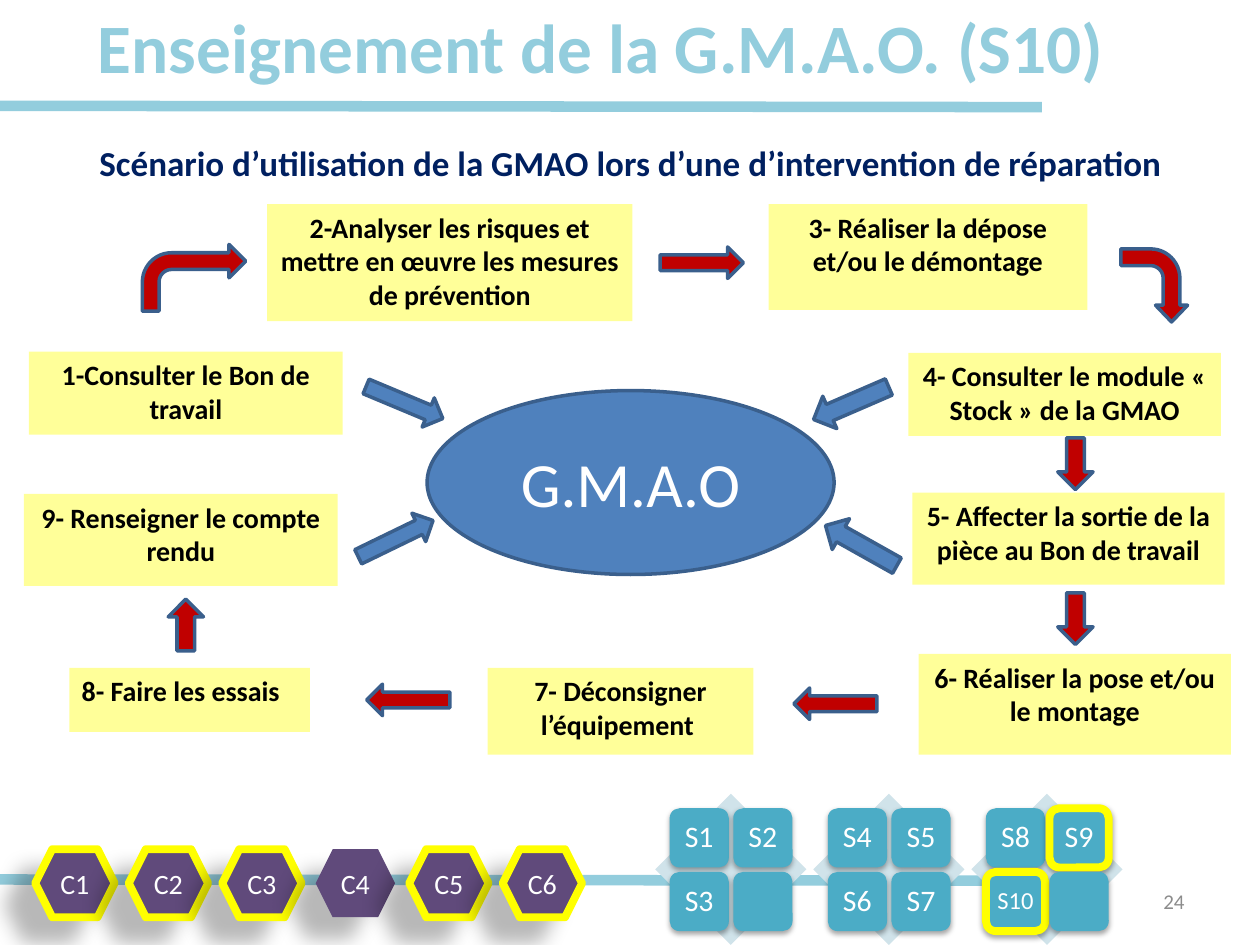
from lxml.etree import SubElement
from pptx import Presentation
from pptx.dml.color import RGBColor
from pptx.enum.shapes import MSO_CONNECTOR, MSO_SHAPE as SHAPE
from pptx.enum.text import MSO_ANCHOR as ANCHOR, PP_ALIGN as ALIGN
from pptx.oxml.ns import qn
from pptx.util import Inches, Pt

COLS, ROWS = 100, 75
WIDTH, HEIGHT = Inches(10), Inches(7.5)
FONT = "Calibri"
WHITE, BLACK, YELLOW = "FFFFFF", "000000", "FFFF00"
SKY, NAVY, TEAL, PALE = "93CDDD", "002060", "4BACC6", "D0E3EA"
PURPLE, CREAM, RED = "604A7B", "FFFF99", "C00000"
BLUE, EDGE, GREY = "4F81BD", "3A5F8C", "8C8C8C"
TILE_SHADOW = (35, 3.1, 1.8, 90)
HEX_SHADOW = (28, 11.8, 19.7, 141)

STEPS = [
    ("1-Consulter le Bon de travail", (2.3, 27.9, 24.9, 6.6)),
    ("2-Analyser les risques et mettre en œuvre les mesures de prévention",
     (21.2, 16.2, 29, 9.3)),
    ("3- Réaliser la dépose et/ou le démontage", (61, 16.2, 25.3, 8.4)),
    ("4- Consulter le module « Stock » de la GMAO", (72.1, 28, 24.8, 6.6)),
    ("5- Affecter la sortie de la pièce au Bon de travail",
     (72.4, 39.1, 24.8, 7.3)),
    ("6- Réaliser la pose et/ou le montage", (72.9, 51.9, 24.8, 8)),
    ("7- Déconsigner l’équipement ", (38.7, 53, 21.1, 6.9)),
    ("8- Faire les essais", (5.5, 53, 19.1, 5.1)),
    ("9- Renseigner le compte rendu", (1.9, 39.2, 24.9, 7.3)),
]
ARROWS = [
    ((28.8, 30.7, 6.6, 2.5), 22.7, BLUE),
    ((64.3, 30.6, 6.5, 2.8), 156.6, BLUE),
    ((65.1, 41.9, 6.5, 2.8), 209.3, BLUE),
    ((28.1, 41.5, 6.6, 2.5), 334.1, BLUE),
    ((52.4, 19.6, 6.6, 2.5), 0, RED),
    ((83.3, 35.4, 4.1, 2.8), 90, RED),
    ((83.3, 47.7, 4.1, 2.8), 90, RED),
    ((63, 54.6, 6.6, 2.5), 180, RED),
    ((29.1, 54.3, 6.6, 2.5), 180, RED),
    ((12.7, 48.2, 4.1, 2.8), 270, RED),
]
TILE_GROUPS = [["S1", "S2", "S3", ""], ["S4", "S5", "S6", "S7"],
               ["S8", "S9", "S10", ""]]


def rgb(value):
    return RGBColor.from_string(value)


def grid(x, y, w, h):
    return [int(v) for v in (x * WIDTH / COLS, y * HEIGHT / ROWS,
                             w * WIDTH / COLS, h * HEIGHT / ROWS)]


def write(sp, text, size, color, bold=False, align=ALIGN.CENTER,
          anchor=ANCHOR.MIDDLE, inset=None):
    tf = sp.text_frame
    tf.word_wrap = True
    tf.vertical_anchor = anchor
    if inset is not None:
        tf.margin_left = tf.margin_right = Inches(inset)
        tf.margin_top = tf.margin_bottom = Inches(inset)
    p = tf.paragraphs[0]
    p.alignment = align
    r = p.add_run()
    r.text = text
    r.font.name, r.font.size, r.font.bold = FONT, Pt(size), bold
    r.font.color.rgb = rgb(color)


def add_label(slide, box, *args, **kwargs):
    write(slide.shapes.add_textbox(*grid(*box)), *args, **kwargs)


def add_shadow(sp, alpha, blur, dist, angle):
    effects = sp.element.spPr.find(qn("a:effectLst"))
    outer = SubElement(effects, qn("a:outerShdw"), blurRad=str(Pt(blur)),
                       dist=str(Pt(dist)), dir=str(angle * 60000),
                       rotWithShape="0")
    color = SubElement(outer, qn("a:srgbClr"), val=BLACK)
    SubElement(color, qn("a:alpha"), val=str(alpha * 1000))


def add_figure(slide, kind, box, fill, line=None, weight=2, angle=0,
               shadow=None):
    sp = slide.shapes.add_shape(kind, *grid(*box))
    sp.rotation = angle
    sp.shadow.inherit = False
    sp.fill.solid()
    sp.fill.fore_color.rgb = rgb(fill)
    if line:
        sp.line.color.rgb = rgb(line)
        sp.line.width = Pt(weight)
    else:
        sp.line.fill.background()
    if shadow:
        add_shadow(sp, *shadow)
    return sp


def add_rule(slide, x1, y1, x2, y2):
    ends = grid(x1, y1, x2, y2)
    cn = slide.shapes.add_connector(MSO_CONNECTOR.STRAIGHT, *ends)
    cn.line.color.rgb = rgb(SKY)
    cn.line.width = Pt(6)
    SubElement(cn.element.spPr, qn("a:effectLst"))


def add_tiles(slide, left, names):
    top, side, pitch, margin = 63, 4.7, 5.05, 1.15
    add_figure(slide, SHAPE.DIAMOND, (left, top, 12, 12), PALE)
    for i, name in enumerate(names):
        row, col = divmod(i, 2)
        box = (left + margin + col * pitch, top + margin + row * pitch,
               side, side)
        line = YELLOW if name in ("S9", "S10") else None
        sp = add_figure(slide, SHAPE.ROUNDED_RECTANGLE, box, TEAL, line, 4.5,
                        shadow=TILE_SHADOW)
        if name:
            write(sp, name, 14 if len(name) > 2 else 17, WHITE, inset=0.03)
            sp.text_frame.paragraphs[0].line_spacing = 0.9


def add_hexagon(slide, number):
    box = (2.8 + 7.42 * (number - 1), 67.4, 6.3, 5.4)
    line = None if number == 4 else YELLOW
    sp = add_figure(slide, SHAPE.HEXAGON, box, PURPLE, line, 4.5,
                    shadow=HEX_SHADOW)
    write(sp, f"C{number}", 16, WHITE, inset=0)


def add_step(slide, text, box):
    sp = add_figure(slide, SHAPE.RECTANGLE, box, CREAM)
    align = ALIGN.LEFT if text.startswith("8") else ALIGN.CENTER
    write(sp, text, 16, BLACK, True, align, ANCHOR.TOP)


def add_cycle(slide):
    for text, box in STEPS:
        add_step(slide, text, box)
    hub = add_figure(slide, SHAPE.OVAL, (33.9, 31, 32.3, 14.6), BLUE, EDGE)
    write(hub, "G.M.A.O", 36, WHITE)
    for box, angle, fill in ARROWS:
        add_figure(slide, SHAPE.RIGHT_ARROW, box, fill, EDGE, angle=angle)
    add_figure(slide, SHAPE.BENT_ARROW, (11.3, 19.4, 8.2, 5.3), RED, EDGE)
    bend = add_figure(slide, SHAPE.BENT_ARROW, (88.7, 20, 5.8, 5.3), RED,
                      EDGE, angle=90)
    for i, value in enumerate((0.25, 0.24, 0.25, 0.44)):
        bend.adjustments[i] = value


def main():
    prs = Presentation()
    prs.slide_width, prs.slide_height = WIDTH, HEIGHT
    slide = prs.slides.add_slide(prs.slide_layouts[6])
    add_rule(slide, -0.4, 69.8, 82.3, 69.9)
    add_label(slide, (5.2, -2.7, 85, 12.6),
              "Enseignement de la G.M.A.O. (S10)", 39.6, SKY, True)
    for i, names in enumerate(TILE_GROUPS):
        add_tiles(slide, 52 + 12.55 * i, names)
    add_rule(slide, 0, 8.4, 82.7, 8.5)
    for number in range(1, 7):
        add_hexagon(slide, number)
    add_label(slide, (2.8, 10.7, 94.5, 4.4),
              "Scénario d’utilisation de la GMAO lors d’une d’intervention "
              "de réparation", 20, NAVY, True, anchor=ANCHOR.TOP)
    add_cycle(slide)
    add_label(slide, (71.7, 69.5, 23.3, 4), "24", 12, GREY,
              align=ALIGN.RIGHT)
    prs.save("out.pptx")


if __name__ == "__main__":
    main()
